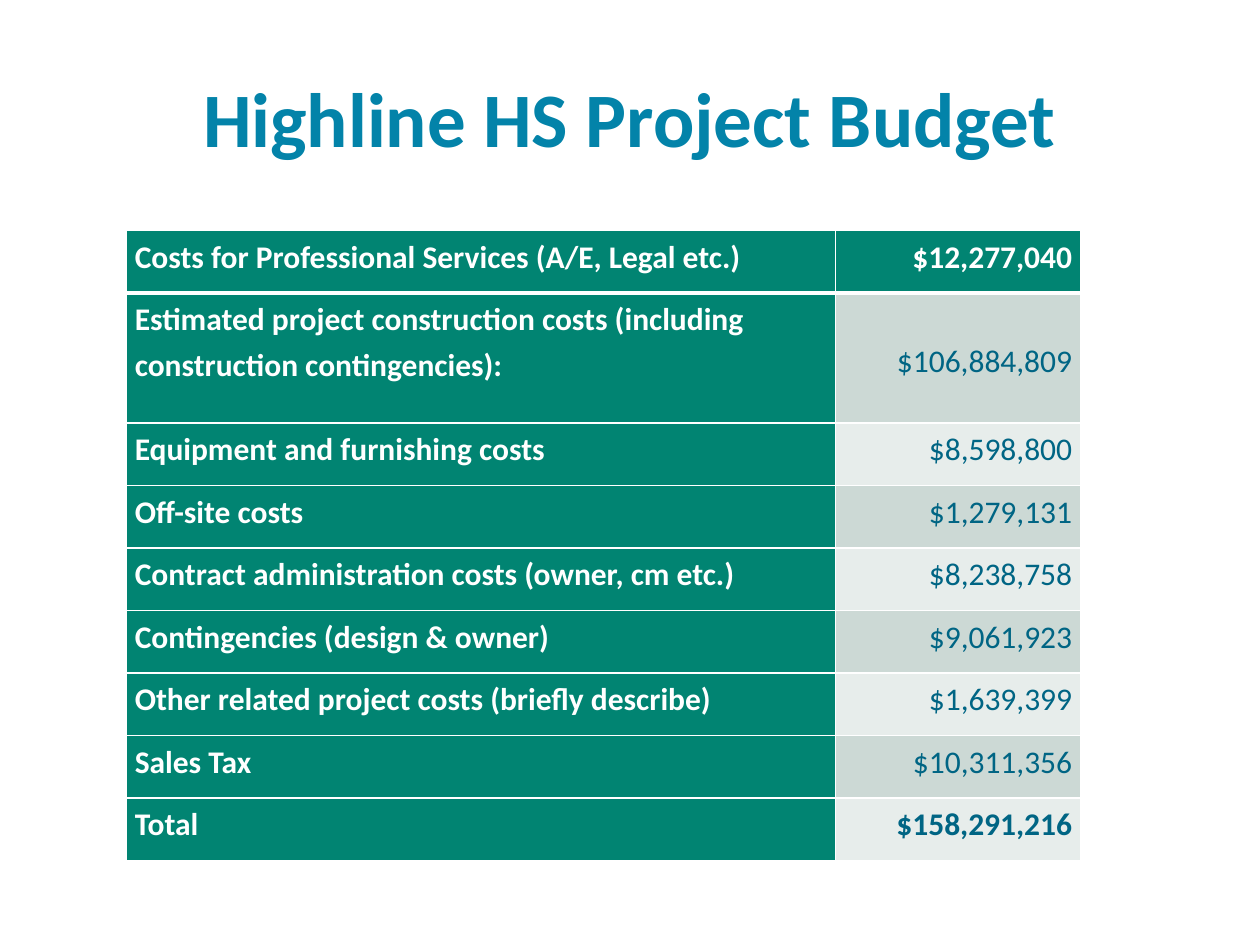
import dataclasses

import pptx
import pptx.dml.color
import pptx.enum.text
import pptx.oxml
import pptx.oxml.ns
import pptx.util

Inches = pptx.util.Inches
Pt = pptx.util.Pt
RGBColor = pptx.dml.color.RGBColor
Align = pptx.enum.text.PP_ALIGN
Anchor = pptx.enum.text.MSO_ANCHOR


@dataclasses.dataclass(frozen=True)
class Theme:
    """Colours, font and type sizes of the slide."""

    font: str = "Calibri"
    title_size: int = 44
    table_size: int = 18
    title: str = "0383A9"
    label_fill: str = "018472"
    amount: str = "006584"
    white: str = "FFFFFF"
    bands: tuple = ("E7EDEB", "CCD9D5")


THEME = Theme()

BUDGET = [
    ("Costs for Professional Services (A/E, Legal etc.)", "$12,277,040"),
    ("Estimated project construction costs (including construction contingencies):", "$106,884,809"),
    ("Equipment and furnishing costs", "$8,598,800"),
    ("Off-site costs", "$1,279,131"),
    ("Contract administration costs (owner, cm etc.)", "$8,238,758"),
    ("Contingencies (design & owner)", "$9,061,923"),
    ("Other related project costs (briefly describe)", "$1,639,399"),
    ("Sales Tax", "$10,311,356"),
    ("Total", "$158,291,216"),
]


def apply(target, values):
    """Set each named attribute of the target."""
    for name, value in values.items():
        setattr(target, name, value)


def write(paragraph, text, size, color, bold, **layout):
    """Fill a paragraph with one formatted run."""
    apply(paragraph, layout)
    run = paragraph.add_run()
    run.text = text
    apply(run.font, {"name": THEME.font, "size": Pt(size), "bold": bold})
    run.font.color.rgb = RGBColor.from_string(color)


def add_title(slide, text, left, top, width, height):
    """Place the centred slide title in its box."""
    shape = slide.shapes.add_textbox(left, top, width, height)
    apply(shape.text_frame, {"word_wrap": True, "vertical_anchor": Anchor.MIDDLE})
    write(shape.text_frame.paragraphs[0], text, THEME.title_size, THEME.title, True,
          alignment=Align.CENTER)


def add_borders(cell, bottom_width):
    """Draw white lines on all four sides of a cell."""
    properties = cell._tc.get_or_add_tcPr()
    for side, width in (("L", 1), ("R", 1), ("T", 1), ("B", bottom_width)):
        properties.append(pptx.oxml.parse_xml(
            f'<a:ln{side} {pptx.oxml.ns.nsdecls("a")} w="{Pt(width)}"><a:solidFill>'
            f'<a:srgbClr val="{THEME.white}"/></a:solidFill></a:ln{side}>'))


def fill_cell(cell, text, fill, color, bold, alignment, anchor, bottom_width):
    """Format one table cell and write its text."""
    apply(cell, {"margin_left": Inches(0.07), "margin_right": Inches(0.07),
                 "margin_top": 0, "margin_bottom": 0, "vertical_anchor": anchor})
    add_borders(cell, bottom_width)
    cell.fill.solid()
    cell.fill.fore_color.rgb = RGBColor.from_string(fill)
    write(cell.text_frame.paragraphs[0], text, THEME.table_size, color, bold,
          alignment=alignment, line_spacing=1.2, space_after=Pt(3))


def add_budget_table(slide, budget, left, top, width, height):
    """Place the budget table, with one taller row for the two-line label."""
    table = slide.shapes.add_table(len(budget), 2, left, top, width, height).table
    amount_width, tall_row, tall_height = Inches(1.95), 1, Inches(1.03)
    table.columns[0].width = width - amount_width
    table.columns[1].width = amount_width
    row_height = (height - tall_height) // (len(budget) - 1)
    for index, (label, amount) in enumerate(budget):
        header, total = index == 0, index == len(budget) - 1
        table.rows[index].height = tall_height if index == tall_row else row_height
        bottom_width = 3 if header else 1
        fill_cell(table.cell(index, 0), label, THEME.label_fill, THEME.white, True,
                  Align.LEFT, Anchor.TOP, bottom_width)
        fill_cell(table.cell(index, 1), amount,
                  THEME.label_fill if header else THEME.bands[index % 2],
                  THEME.white if header else THEME.amount, header or total,
                  Align.RIGHT, Anchor.MIDDLE if index == tall_row else Anchor.TOP,
                  bottom_width)


def main():
    """Build the budget slide and save it."""
    presentation = pptx.Presentation()
    apply(presentation, {"slide_width": Inches(10), "slide_height": Inches(7.5)})
    slide = presentation.slides.add_slide(presentation.slide_layouts[6])
    add_title(slide, "Highline HS Project Budget",
              Inches(0.5), Inches(0.3), Inches(9), Inches(1.25))
    add_budget_table(slide, BUDGET, Inches(1), Inches(1.83), Inches(7.58), Inches(5))
    presentation.save("out.pptx")


if __name__ == "__main__":
    main()
